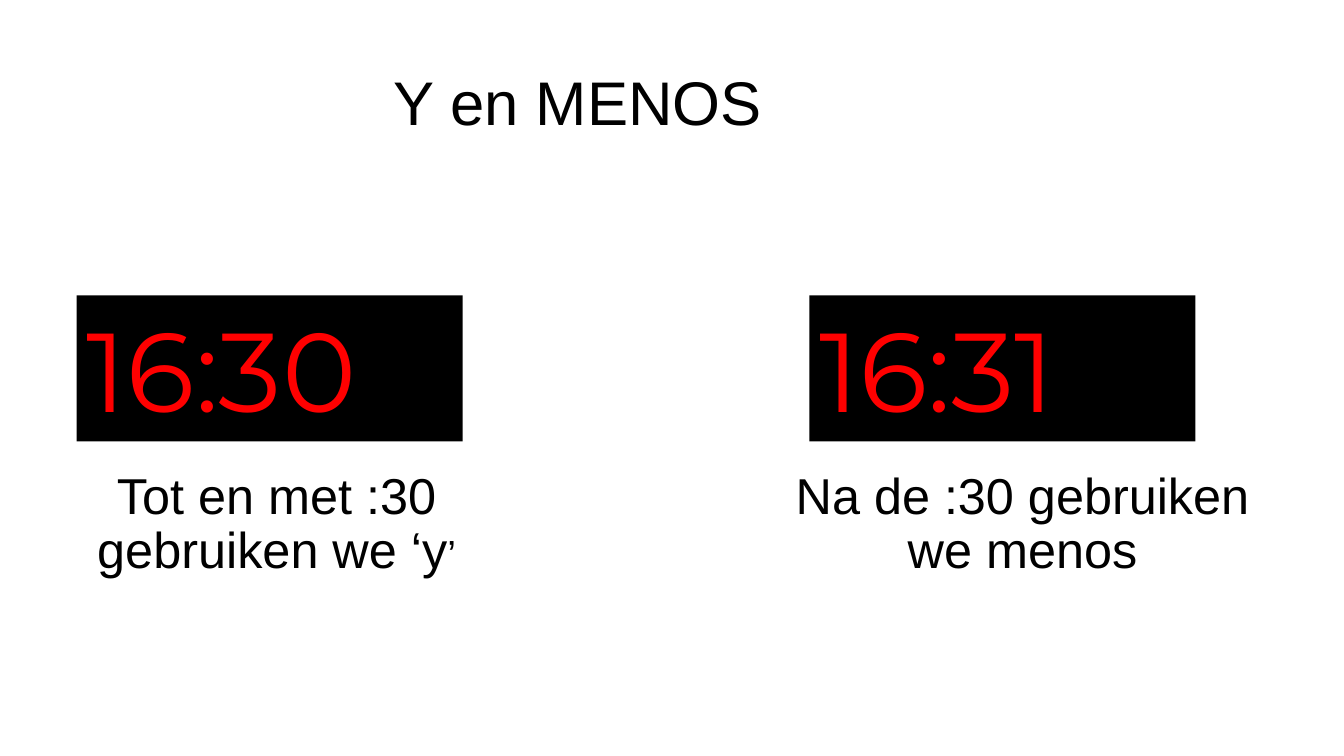
from pptx import Presentation
from pptx.dml.color import RGBColor
from pptx.enum.shapes import MSO_SHAPE
from pptx.enum.text import MSO_ANCHOR, MSO_AUTO_SIZE, PP_ALIGN
from pptx.oxml.ns import qn
from pptx.util import Pt

BLACK = RGBColor(0, 0, 0)
RED = RGBColor(255, 0, 0)
CLOCK_W, CLOCK_H = 275.76, 104.4
CAPTION_DROP = 121.68


def place(shape, left, top, width, height):
    shape.left, shape.top = Pt(left), Pt(top)
    shape.width, shape.height = Pt(width), Pt(height)


def add_run(para, text, size, color=BLACK, font="Arial"):
    run = para.add_run()
    run.text = text
    run.font.size = Pt(size)
    run.font.name = font
    run.font.color.rgb = color


def set_title(title, text, box):
    place(title, *box)
    frame = title.text_frame
    frame.word_wrap = True
    frame.auto_size = MSO_AUTO_SIZE.NONE
    frame.vertical_anchor = MSO_ANCHOR.MIDDLE
    para = frame.paragraphs[0]
    para.alignment = PP_ALIGN.LEFT
    para.line_spacing = 0.9
    add_run(para, text, 44)


def add_clock(slide, time, left, top):
    clock = slide.shapes.add_shape(
        MSO_SHAPE.RECTANGLE, Pt(left), Pt(top), Pt(CLOCK_W), Pt(CLOCK_H))
    clock.shadow.inherit = False
    clock.fill.solid()
    clock.fill.fore_color.rgb = BLACK
    clock.line.fill.background()
    frame = clock.text_frame
    frame.word_wrap = True
    frame.auto_size = MSO_AUTO_SIZE.SHAPE_TO_FIT_TEXT
    frame.vertical_anchor = MSO_ANCHOR.TOP
    para = frame.paragraphs[0]
    para.alignment = PP_ALIGN.LEFT
    add_run(para, time, 80, RED, "Montserrat")


def set_caption(body, runs, box):
    place(body, *box)
    frame = body.text_frame
    frame.word_wrap = True
    frame.auto_size = MSO_AUTO_SIZE.NONE
    frame.vertical_anchor = MSO_ANCHOR.TOP
    para = frame.paragraphs[0]
    para.alignment = PP_ALIGN.CENTER
    para.line_spacing = 0.9
    para.space_before = Pt(0)
    props = para._p.get_or_add_pPr()
    props.set("marL", "0")
    props.set("indent", "0")
    props.append(props.makeelement(qn("a:buNone"), {}))
    for text, size in runs:
        add_run(para, text, size)


def add_rule(slide, body, box, inset, time, runs):
    """Put a clock, inset from the left, above its caption in the box."""
    left, top, width, height = box
    add_clock(slide, time, left + inset, top)
    set_caption(body, runs, (left, top + CAPTION_DROP,
                             width, height - CAPTION_DROP))


def main():
    deck = Presentation()
    deck.slide_width, deck.slide_height = Pt(960), Pt(540)
    slide = deck.slides.add_slide(deck.slide_layouts[3])
    title, first, second = list(slide.placeholders)[:3]
    set_title(title, "Y en MENOS", (273.6, 23.04, 828, 104.4))
    add_rule(slide, first, (38.16, 210.96, 318.96, 464.4), 16.56, "16:30",
             [("Tot en met :30 gebruiken we ‘y", 36), ("’", 28)])
    add_rule(slide, second, (556.56, 210.96, 347.76, 464.4), 21.6, "16:31",
             [("Na de :30 gebruiken we menos", 36)])
    deck.save("out.pptx")


if __name__ == "__main__":
    main()
